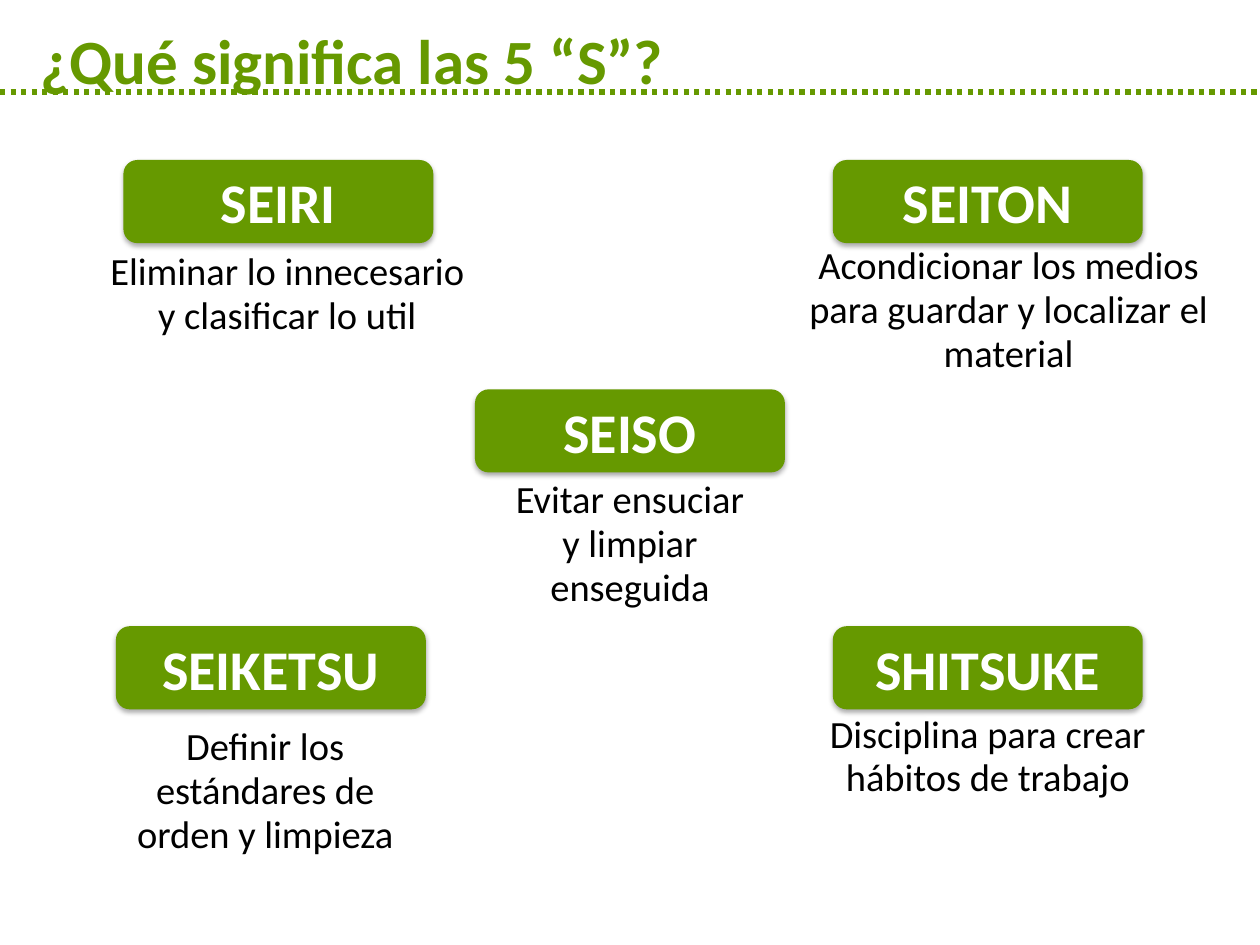
from lxml.etree import SubElement
from pptx import Presentation
from pptx.dml.color import RGBColor
from pptx.enum.dml import MSO_LINE
from pptx.enum.shapes import MSO_CONNECTOR, MSO_SHAPE
from pptx.enum.text import MSO_ANCHOR, PP_ALIGN
from pptx.oxml.ns import qn
from pptx.util import Inches, Pt

COLORS = {"green": "669900", "white": "FFFFFF", "black": "000000"}
FONT = "Calibri"
LABEL_WIDTH, LABEL_HEIGHT = 2.46, 0.66

# Name, label position, description box (left, top, width, height), description
PRINCIPLES = [
    ("SEIRI", (0.98, 1.27), (0.74, 1.94, 3.08, 0.8),
     ["Eliminar lo innecesario y clasificar lo util"]),
    ("SEITON", (6.61, 1.27), (6.17, 1.89, 3.67, 1.16),
     ["Acondicionar los medios para guardar y localizar el material"]),
    ("SEISO", (3.77, 3.09), (3.46, 3.75, 3.08, 1.16),
     ["Evitar ensuciar", "y limpiar", "enseguida"]),
    ("SEIKETSU", (0.92, 4.97), (0.48, 5.71, 3.25, 1.16),
     ["Definir los", "estándares de", "orden y limpieza"]),
    ("SHITSUKE", (6.61, 4.97), (6.05, 5.61, 3.58, 0.8),
     ["Disciplina para crear hábitos de trabajo"]),
]


def color(name):
    return RGBColor.from_string(COLORS[name])


def write_text(text_frame, lines, size, color_name, bold=False,
               alignment=PP_ALIGN.CENTER, line_spacing=None):
    """Fill the frame with one paragraph for each line."""
    text_frame.word_wrap = True
    text_frame.text = "\n".join(lines)
    for paragraph in text_frame.paragraphs:
        paragraph.alignment = alignment
        paragraph.line_spacing = line_spacing
        paragraph.font.name = FONT
        paragraph.font.size = Pt(size)
        paragraph.font.bold = bold
        paragraph.font.color.rgb = color(color_name)


def add_text(slide, box, lines, size, color_name, **style):
    text_box = slide.shapes.add_textbox(*map(Inches, box))
    write_text(text_box.text_frame, lines, size, color_name, **style)


def add_divider(slide, top, width):
    line = slide.shapes.add_connector(
        MSO_CONNECTOR.STRAIGHT, 0, Inches(top), Inches(width), Inches(top))
    line.line.color.rgb = color("green")
    line.line.width = Pt(3)
    line.line.dash_style = MSO_LINE.ROUND_DOT
    SubElement(line._element.spPr, qn("a:effectLst"))


def add_soft_shadow(shape):
    """Put a faint shadow straight below the shape."""
    shape.shadow.inherit = False
    effects = shape._element.spPr.find(qn("a:effectLst"))
    shadow = SubElement(effects, qn("a:outerShdw"), blurRad=str(Pt(3.1)),
                        dist=str(Pt(1.8)), dir="5400000", rotWithShape="0")
    shadow_color = SubElement(shadow, qn("a:srgbClr"), val=COLORS["black"])
    SubElement(shadow_color, qn("a:alpha"), val="35000")


def add_label(slide, name, position):
    left, top = position
    label = slide.shapes.add_shape(
        MSO_SHAPE.ROUNDED_RECTANGLE, Inches(left), Inches(top),
        Inches(LABEL_WIDTH), Inches(LABEL_HEIGHT))
    label.fill.solid()
    label.fill.fore_color.rgb = color("green")
    label.line.fill.background()
    add_soft_shadow(label)
    label.text_frame.vertical_anchor = MSO_ANCHOR.MIDDLE
    write_text(label.text_frame, [name], 32, "white", bold=True)


def main():
    presentation = Presentation()
    presentation.slide_width = Inches(10)
    presentation.slide_height = Inches(7.5)
    slide = presentation.slides.add_slide(presentation.slide_layouts[6])

    add_divider(slide, 0.73, 10)
    add_text(slide, (0.22, 0.12, 9, 0.54), ["¿Qué significa las 5 “S”?"],
             36, "green", bold=True, alignment=PP_ALIGN.LEFT)
    for name, position, box, description in PRINCIPLES:
        add_text(slide, box, description, 22, "black", line_spacing=0.95)
        add_label(slide, name, position)

    presentation.save("out.pptx")


if __name__ == "__main__":
    main()
